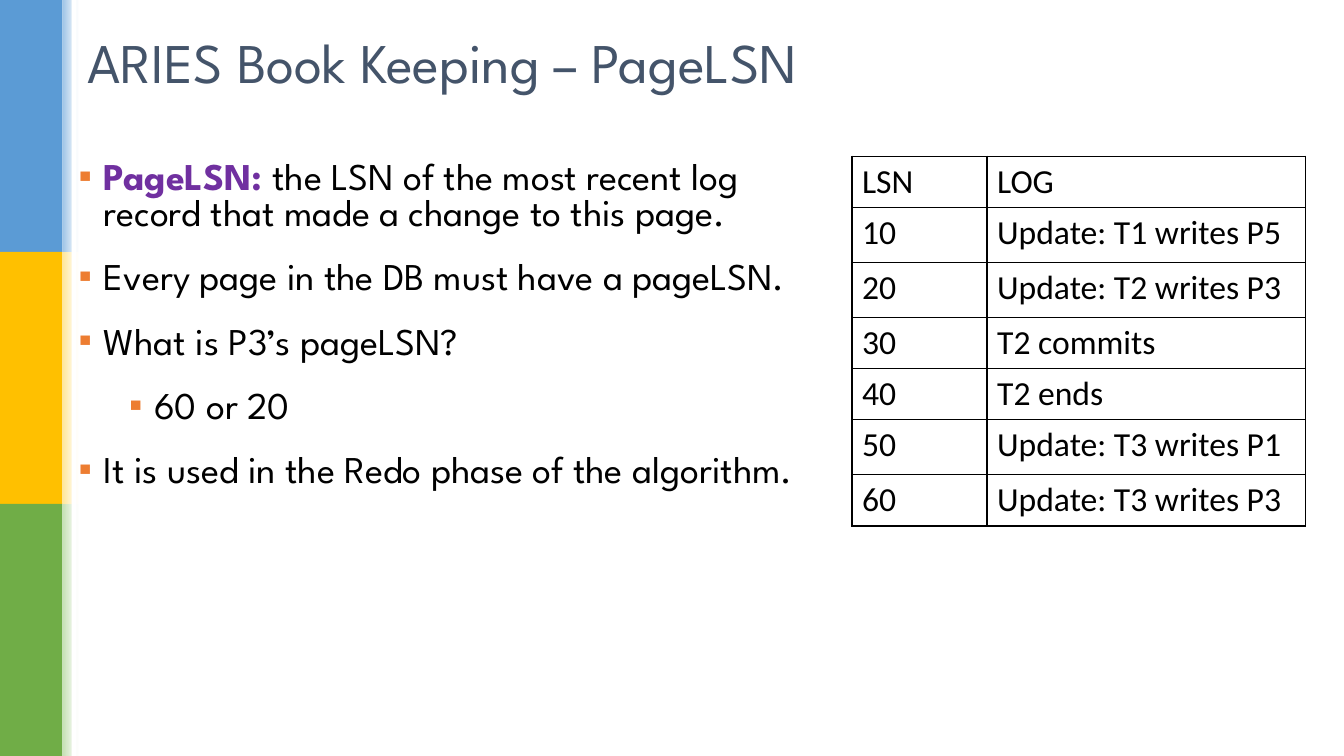
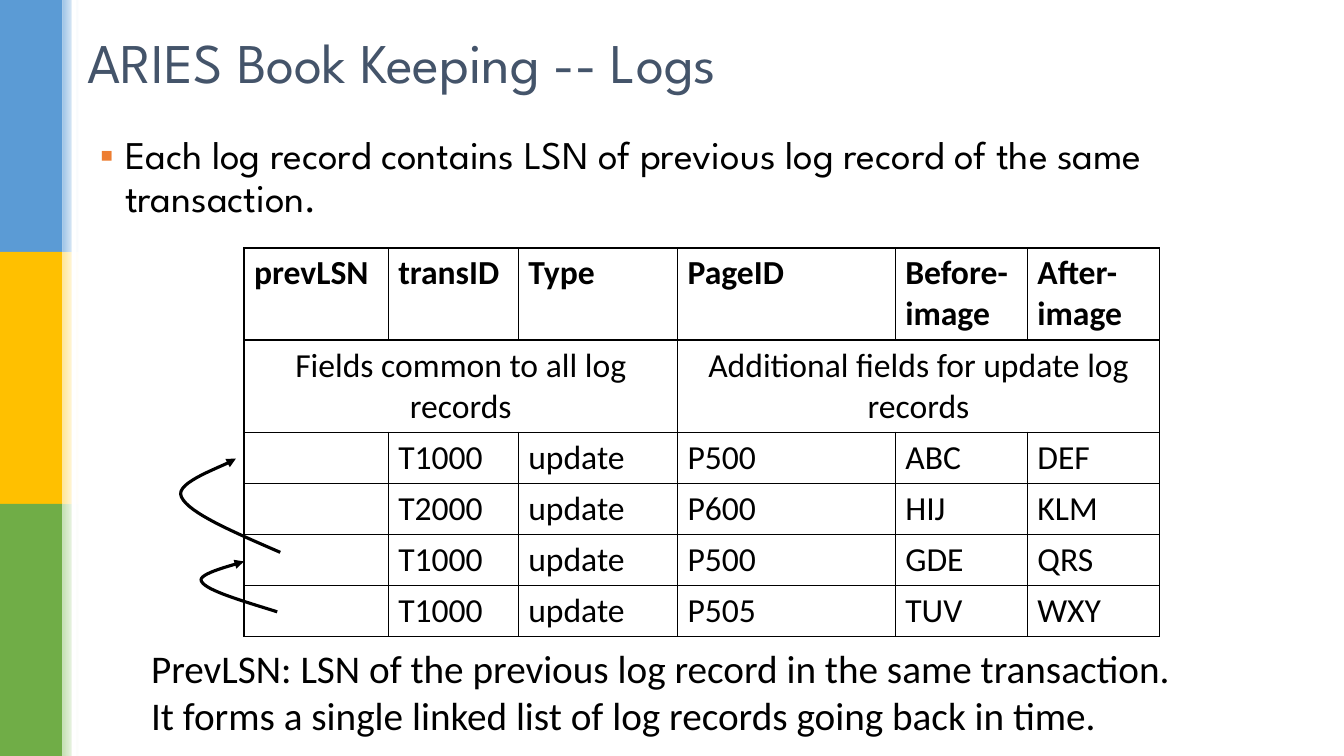
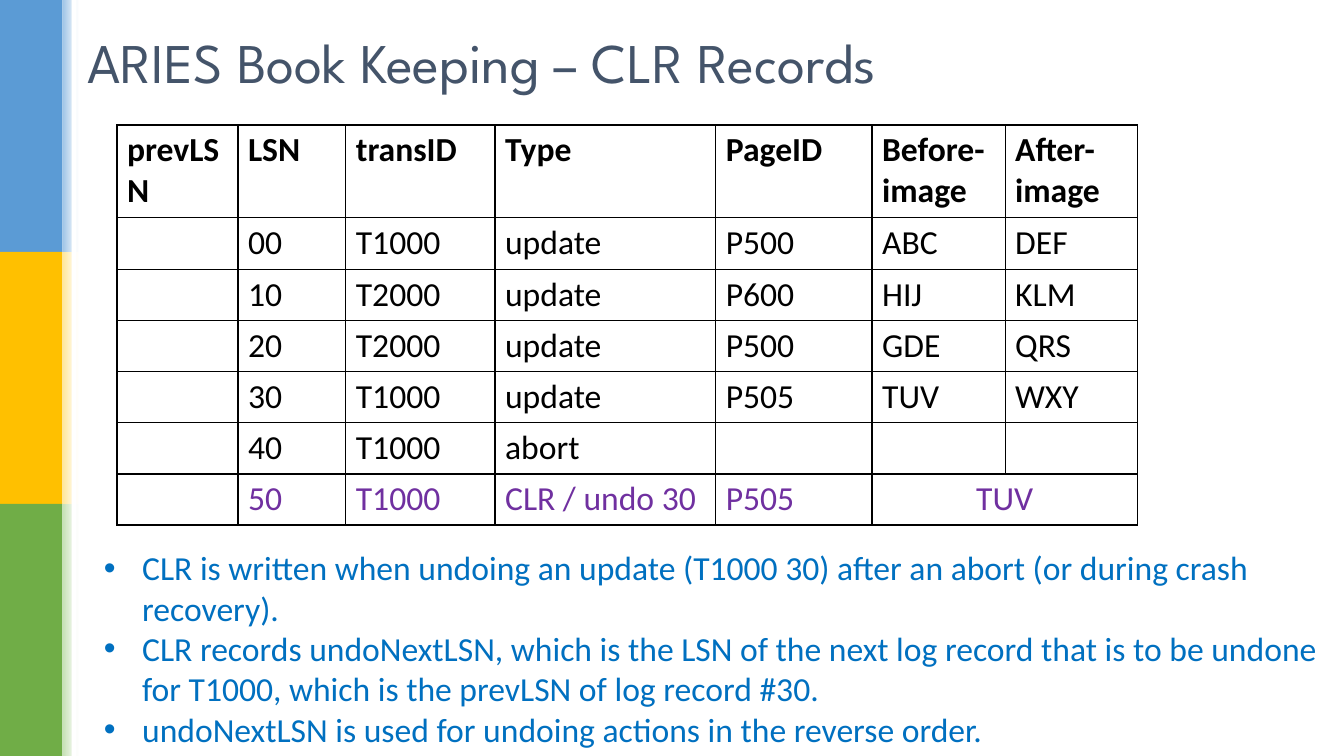
"""Build three slides on the bookkeeping of the ARIES recovery algorithm."""
from dataclasses import dataclass

from lxml import etree
from pptx import Presentation
from pptx import util as u
from pptx.dml.color import RGBColor
from pptx.enum import shapes, text
from pptx.oxml import ns


@dataclass(frozen=True)
class Theme:
    """Colours, fonts and type sizes of the deck."""

    title_color: str = "44546A"
    ink: str = "000000"
    paper: str = "FFFFFF"
    bullet: str = "ED7D31"
    accent: str = "7030A0"
    note: str = "0070C0"
    bands: tuple = (("5B9BD5", "9DC3E6"), ("FFC000", "FFE699"), ("70AD47", "C5E0B4"))
    heading_font: str = "League Spartan"
    text_font: str = "Calibri"
    bullet_font: str = "Arial"
    title_size: float = 40
    lead_size: float = 28
    list_size: float = 27
    table_size: float = 24


THEME = Theme()


def rgb(color):
    """Turn a hex string into a colour."""
    return RGBColor.from_string(color)


def add_element(parent, tag, **attributes):
    """Append a drawing element with attributes to a parent."""
    return etree.SubElement(parent, ns.qn(tag), {key: str(value) for key, value in attributes.items()})


def place(shape, left, top, width, height):
    """Move and size a shape, in inches."""
    shape.left, shape.top = u.Inches(left), u.Inches(top)
    shape.width, shape.height = u.Inches(width), u.Inches(height)


def write_text(paragraph, content, *, font=THEME.text_font, size=THEME.table_size,
               color=THEME.ink, bold=False, align=None):
    """Add a formatted run to a paragraph."""
    run = paragraph.add_run()
    run.text = content
    run.font.name, run.font.size, run.font.bold = font, u.Pt(size), bold
    run.font.color.rgb = rgb(color)
    if align is not None:
        paragraph.alignment = align


def set_bullet(paragraph, character, left, hanging, color):
    """Give a paragraph a coloured bullet and a hanging indent."""
    properties = paragraph._p.get_or_add_pPr()
    properties.set("marL", str(u.Inches(left)))
    properties.set("indent", str(-u.Inches(hanging)))
    add_element(add_element(properties, "a:buClr"), "a:srgbClr", val=color)
    add_element(properties, "a:buFont", typeface=THEME.bullet_font)
    add_element(properties, "a:buChar", char=character)


def fill_list(slide, box, items, *, character="▪", hanging=0.25, bullet_color=THEME.bullet,
              line_spacing=1.0, before=0, after=0, **style):
    """Fill the body placeholder with (level, lead, content) items."""
    body = slide.placeholders[1]
    place(body, *box)
    frame = body.text_frame
    frame.auto_size = text.MSO_AUTO_SIZE.NONE
    for index, (level, lead, content) in enumerate(items):
        paragraph = frame.add_paragraph() if index else frame.paragraphs[0]
        paragraph.level = level
        paragraph.line_spacing = line_spacing
        paragraph.space_before = u.Pt(before if index else 0)
        paragraph.space_after = u.Pt(after)
        set_bullet(paragraph, character, hanging + level * 0.5, hanging, bullet_color)
        if lead:
            write_text(paragraph, lead, **{**style, "bold": True, "color": THEME.accent})
        write_text(paragraph, content, **style)


def draw_borders(cell):
    """Outline a table cell and leave it unfilled."""
    properties = cell._tc.get_or_add_tcPr()
    for tag in ("a:lnL", "a:lnR", "a:lnT", "a:lnB"):
        line = add_element(properties, tag, w=u.Pt(1))
        add_element(add_element(line, "a:solidFill"), "a:srgbClr", val=THEME.ink)
    cell.fill.background()


def add_grid(slide, left, top, widths, heights, rows, *, bold_header=False, merges=(), accent_row=None):
    """Add an outlined table; merges are (row, first column, last column)."""
    table = slide.shapes.add_table(len(rows), len(widths), u.Inches(left), u.Inches(top),
                                   u.Inches(sum(widths)), u.Inches(sum(heights))).table
    table.first_row = table.horz_banding = False
    for column, width in zip(table.columns, widths):
        column.width = u.Inches(width)
    for row, height in zip(table.rows, heights):
        row.height = u.Inches(height)
    centred = {(row, first) for row, first, _ in merges}
    for row, values in enumerate(rows):
        for column, value in enumerate(values):
            cell = table.cell(row, column)
            draw_borders(cell)
            if value:
                write_text(cell.text_frame.paragraphs[0], value,
                           bold=bold_header and row == 0,
                           color=THEME.accent if row == accent_row else THEME.ink,
                           align=text.PP_ALIGN.CENTER if (row, column) in centred else None)
    for row, first, last in merges:
        table.cell(row, first).merge(table.cell(row, last))


def bezier_points(start, first, second, end, steps=16):
    """Return the points along a cubic curve after its start."""
    points = []
    for step in range(1, steps + 1):
        t = step / steps
        weights = ((1 - t) ** 3, 3 * t * (1 - t) ** 2, 3 * t ** 2 * (1 - t), t ** 3)
        points.append(tuple(sum(weight * point[axis] for weight, point in
                                zip(weights, (start, first, second, end))) for axis in (0, 1)))
    return points


def add_curved_arrow(slide, start, *segments):
    """Draw a curved arrow through cubic segments."""
    points, current = [], start
    for first, second, end in segments:
        points += bezier_points(current, first, second, end)
        current = end
    builder = slide.shapes.build_freeform(*(u.Inches(value) for value in start))
    builder.add_line_segments([(u.Inches(x), u.Inches(y)) for x, y in points], close=False)
    arrow = builder.convert_to_shape()
    arrow.shadow.inherit = False
    arrow.fill.background()
    arrow.line.color.rgb = rgb(THEME.ink)
    arrow.line.width = u.Pt(2.25)
    add_element(arrow.line._get_or_add_ln(), "a:tailEnd", type="triangle")


def add_band(slide, box, color, fade=None):
    """Add a plain or fading rectangle."""
    band = slide.shapes.add_shape(shapes.MSO_SHAPE.RECTANGLE, *(u.Inches(value) for value in box))
    band.shadow.inherit = False
    band.line.fill.background()
    if fade:
        band.fill.gradient()
        band.fill.gradient_angle = 0
        for stop, stop_color in zip(band.fill.gradient_stops, (color, fade)):
            stop.color.rgb = rgb(stop_color)
            stop.position = 0 if stop_color == color else 1
    else:
        band.fill.solid()
        band.fill.fore_color.rgb = rgb(color)
    return band


def set_up_master(presentation, slide):
    """Put the side bands and the title position on the slide master."""
    bands = []
    for index, (strong, light) in enumerate(THEME.bands):
        bands.append(add_band(slide, (0, index * 2.5, 0.62, 2.5), strong))
        bands.append(add_band(slide, (0.62, index * 2.5, 0.16, 2.5), light, THEME.paper))
    bands.append(add_band(slide, (0.71, 0, 0.05, 7.5), THEME.paper))
    master = presentation.slide_master
    for index, band in enumerate(bands):
        band.element.xpath(".//p:cNvPr")[0].set("id", str(100 + index))
        master.shapes.element.insert(2 + index, band.element)
    place(master.placeholders[0], 0.77, 0.22, 9.65, 0.78)


def add_slide(presentation, title):
    """Add a slide with a formatted title."""
    slide = presentation.slides.add_slide(presentation.slide_layouts[1])
    frame = slide.shapes.title.text_frame
    frame.auto_size = text.MSO_AUTO_SIZE.NONE
    frame.vertical_anchor = text.MSO_ANCHOR.MIDDLE
    write_text(frame.paragraphs[0], title, font=THEME.heading_font, size=THEME.title_size,
               color=THEME.title_color, align=text.PP_ALIGN.LEFT)
    return slide


def build_page_lsn(presentation):
    """Build the slide on PageLSN."""
    slide = add_slide(presentation, "ARIES Book Keeping – PageLSN")
    set_up_master(presentation, slide)
    fill_list(slide, (0.68, 1.55, 7.78, 4.95), [
        (0, "PageLSN: ", "the LSN of the most recent log record that made a change to this page."),
        (0, "", "Every page in the DB must have a pageLSN."),
        (0, "", "What is P3’s pageLSN?"),
        (1, "", "60 or 20"),
        (0, "", "It is used in the Redo phase of the algorithm."),
    ], line_spacing=0.8, before=8, after=12, font=THEME.heading_font, size=THEME.list_size)
    add_grid(slide, 8.45, 1.55, (1.34, 3.16), (0.48, 0.55, 0.54, 0.48, 0.48, 0.55, 0.48), [
        ("LSN", "LOG"),
        ("10", "Update: T1 writes P5"),
        ("20", "Update: T2 writes P3"),
        ("30", "T2 commits"),
        ("40", "T2 ends"),
        ("50", "Update: T3 writes P1"),
        ("60", "Update: T3 writes P3"),
    ])


def build_logs(presentation):
    """Build the slide on log records."""
    slide = add_slide(presentation, "ARIES Book Keeping -- Logs")
    fill_list(slide, (0.89, 1.3, 12.14, 1.14), [
        (0, "", "Each log record contains LSN of previous log record of the same transaction."),
    ], line_spacing=0.9, font=THEME.heading_font, size=THEME.lead_size)
    add_grid(slide, 2.42, 2.46, (1.43, 1.29, 1.58, 2.16, 1.31, 1.31), (0.8, 0.8) + (0.49,) * 4, [
        ("prevLSN", "transID", "Type", "PageID", "Before-image", "After-image"),
        ("Fields common to all log records", "", "", "Additional fields for update log records", "", ""),
        ("", "T1000", "update", "P500", "ABC", "DEF"),
        ("", "T2000", "update", "P600", "HIJ", "KLM"),
        ("", "T1000", "update", "P500", "GDE", "QRS"),
        ("", "T1000", "update", "P505", "TUV", "WXY"),
    ], bold_header=True, merges=((1, 0, 2), (1, 3, 5)))
    add_curved_arrow(slide, (2.75, 6.07), ((2.4, 5.96), (2.05, 5.86), (2, 5.77)),
                     ((1.94, 5.69), (2.35, 5.6), (2.42, 5.57)))
    add_curved_arrow(slide, (2.78, 5.48), ((2.32, 5.28), (1.87, 5.09), (1.8, 4.93)),
                     ((1.72, 4.78), (2.25, 4.62), (2.34, 4.55)))
    caption = slide.shapes.add_textbox(*(u.Inches(value) for value in (1.4, 6.34, 10.31, 1.04)))
    caption.text_frame.word_wrap = True
    write_text(caption.text_frame.paragraphs[0],
               "PrevLSN: LSN of the previous log record in the same transaction. "
               "It forms a single linked list of log records going back in time.",
               size=THEME.lead_size)


def build_clr_records(presentation):
    """Build the slide on CLR records."""
    slide = add_slide(presentation, "ARIES Book Keeping – CLR Records")
    add_grid(slide, 1.16, 1.24, (1.2, 1.07, 1.48, 2.19, 1.55, 1.32, 1.31),
             (0.78, 0.52, 0.45, 0.47, 0.45, 0.45, 0.45), [
        ("prevLSN", "LSN", "transID", "Type", "PageID", "Before-image", "After-image"),
        ("", "00", "T1000", "update", "P500", "ABC", "DEF"),
        ("", "10", "T2000", "update", "P600", "HIJ", "KLM"),
        ("", "20", "T2000", "update", "P500", "GDE", "QRS"),
        ("", "30", "T1000", "update", "P505", "TUV", "WXY"),
        ("", "40", "T1000", "abort", "", "", ""),
        ("", "50", "T1000", "CLR / undo 30", "P505", "TUV", ""),
    ], bold_header=True, merges=((6, 5, 6),), accent_row=6)
    fill_list(slide, (0.93, 5.38, 12.6, 2.12), [
        (0, "", "CLR is written when undoing an update (T1000 30) after an abort (or during crash recovery)."),
        (0, "", "CLR records undoNextLSN, which is the LSN of the next log record that is to be undone "
                "for T1000, which is the prevLSN of log record #30."),
        (0, "", "undoNextLSN is used for undoing actions in the reverse order."),
    ], character="•", hanging=0.38, bullet_color=THEME.note, color=THEME.note)


def main():
    """Build and save the presentation."""
    presentation = Presentation()
    presentation.slide_width, presentation.slide_height = u.Inches(13.33), u.Inches(7.5)
    build_page_lsn(presentation)
    build_logs(presentation)
    build_clr_records(presentation)
    presentation.save("out.pptx")


if __name__ == "__main__":
    main()
